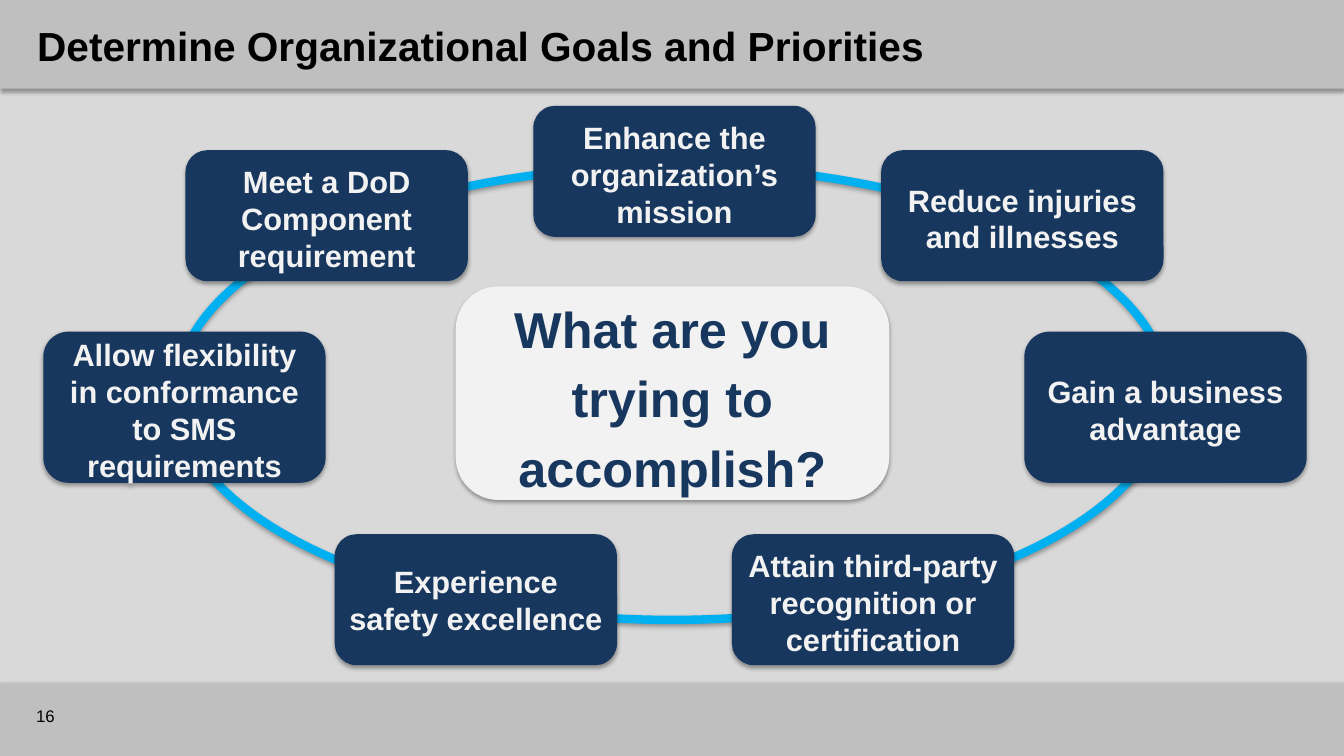
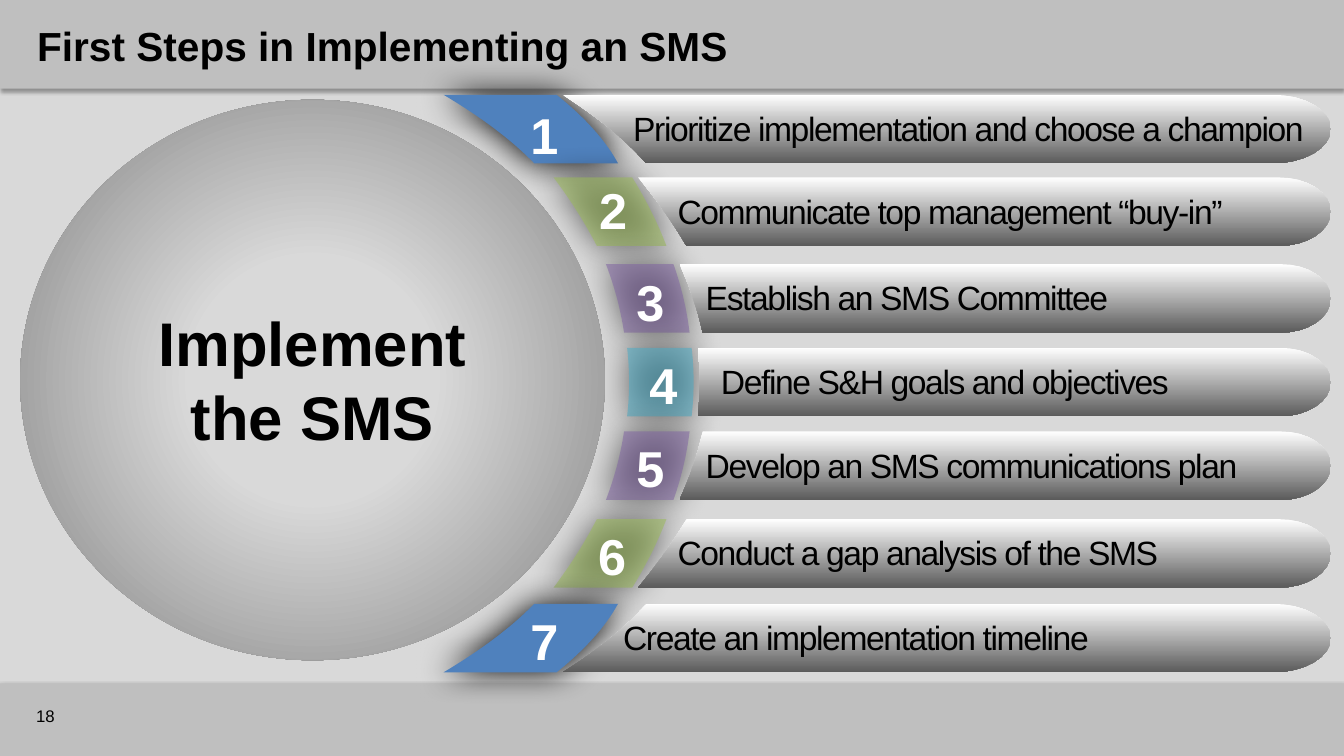
import math
import pptx
import pptx.util
import pptx.dml.color
import pptx.enum.shapes
import pptx.enum.text
import pptx.oxml.ns
from lxml import etree

RGB = pptx.dml.color.RGBColor
BLACK = RGB(0x00, 0x00, 0x00)
WHITE = RGB(0xFF, 0xFF, 0xFF)
PALE = RGB(0xF2, 0xF2, 0xF2)
LIGHT = RGB(0xD9, 0xD9, 0xD9)
BAND = RGB(0xBF, 0xBF, 0xBF)
GREY = RGB(0x80, 0x80, 0x80)
DARK = RGB(0x5B, 0x5B, 0x5B)
NAVY = RGB(0x17, 0x37, 0x5E)
SKY = RGB(0x00, 0xB0, 0xF0)
BLUE = RGB(0x4F, 0x81, 0xBD)
GREEN = RGB(0x9B, 0xBB, 0x59)
PURPLE = RGB(0x80, 0x64, 0xA2)
TEAL = RGB(0x4B, 0xAC, 0xC6)

PX = 9144
WIDE, HIGH = 1333, 750
SHAPE = pptx.enum.shapes.MSO_SHAPE
LEFT = pptx.enum.text.PP_ALIGN.LEFT
CENTER = pptx.enum.text.PP_ALIGN.CENTER
TOP = pptx.enum.text.MSO_ANCHOR.TOP
MIDDLE = pptx.enum.text.MSO_ANCHOR.MIDDLE
qn = pptx.oxml.ns.qn


def style(shape, fill=None, blur=3.1, drop=1.8, alpha=35):
    if fill is None:
        shape.fill.background()
    else:
        shape.fill.solid()
        shape.fill.fore_color.rgb = fill
    shape.line.fill.background()
    shape.shadow.inherit = False
    glow = etree.SubElement(
        shape._element.spPr.find(qn("a:effectLst")), qn("a:outerShdw"),
        blurRad=str(round(blur * 12700)), dist=str(round(drop * 12700)),
        dir="5400000", algn="ctr", rotWithShape="0")
    tint = etree.SubElement(glow, qn("a:srgbClr"), val="000000")
    etree.SubElement(tint, qn("a:alpha"), val=str(alpha * 1000))


def write(shape, text, size, color=BLACK, bold=False, align=LEFT,
          anchor=MIDDLE, pads=(10, 5, 10, 5), wrap=True):
    frame = shape.text_frame
    frame.word_wrap = wrap
    frame.vertical_anchor = anchor
    frame.margin_left, frame.margin_top, frame.margin_right, frame.margin_bottom = (
        pad * PX for pad in pads)
    para = frame.paragraphs[0]
    para.alignment = align
    run = para.add_run()
    run.text = text
    run.font.name = "Arial"
    run.font.size = pptx.util.Pt(size)
    run.font.bold = bold
    run.font.color.rgb = color
    return run


deck = pptx.Presentation()
deck.slide_width = WIDE * PX
deck.slide_height = HIGH * PX

pages = []
for title, number in (("Determine Organizational Goals and Priorities", "16"),
                      ("First Steps in Implementing an SMS", "18")):
    slide = deck.slides.add_slide(deck.slide_layouts[6])
    slide.background.fill.solid()
    slide.background.fill.fore_color.rgb = LIGHT
    for top, tall in ((678, 72), (0, 88)):
        band = slide.shapes.add_shape(SHAPE.RECTANGLE, 0, top * PX, WIDE * PX, tall * PX)
        style(band, BAND)
    head = slide.shapes.add_textbox(27 * PX, 14 * PX, 1293 * PX, 62 * PX)
    write(head, title, 29, bold=True)
    foot = slide.shapes.add_textbox(26 * PX, 690 * PX, 100 * PX, 40 * PX)
    write(foot, number, 12)
    pages.append(slide.shapes)

goals, steps = pages

ring = goals.add_shape(SHAPE.OVAL, 175 * PX, 165 * PX, 983 * PX, 450 * PX)
style(ring)
ring.line.color.rgb = SKY
ring.line.width = pptx.util.Pt(6)

core = goals.add_shape(SHAPE.ROUNDED_RECTANGLE, 452 * PX, 284 * PX, 430 * PX, 212 * PX)
core.adjustments[0] = 0.2
style(core, PALE)
write(core, "What are you trying to accomplish?", 36, NAVY, True, CENTER)
core.text_frame.paragraphs[0].line_spacing = 1.15

WIDER, CLOSE = (9, 9, 9, 4), (4, 4, 4, 4)
for left, top, tall, pads, text in (
        (874, 149, 130, WIDER, "Reduce injuries and illnesses"),
        (43, 329, 150, WIDER, "Allow flexibility in conformance to SMS requirements"),
        (184, 149, 130, WIDER, "Meet a DoD Component requirement"),
        (529, 105, 130, WIDER, "Enhance the organization’s mission"),
        (1016, 329, 150, WIDER, "Gain a business advantage"),
        (726, 530, 130, WIDER, "Attain third-party recognition or certification"),
        (332, 530, 130, CLOSE, "Experience safety excellence")):
    goal = goals.add_shape(SHAPE.ROUNDED_RECTANGLE, left * PX, top * PX, 280 * PX, tall * PX)
    style(goal, NAVY)
    write(goal, text, 22, PALE, True, CENTER, pads=pads)
    goal.text_frame.paragraphs[0].space_after = pptx.util.Pt(2)

TALL, END, PARTS = 68, 1320, 16
forms = (
    (BLUE, 100, 6, 58, (440, 530), (552, 613), (558, 641)),
    (GREEN, 54, 2, 52, (549, 592), (627, 661), (633, 681)),
    (PURPLE, 54, 2, 50, (601, 619), (668, 684), (674, 697)),
    (TEAL, 54, 2, 51, (622, 622), (686, 686), (692, 692)),
)
rows = (
    (94, 516, 98, 628, "Prioritize implementation and choose a champion"),
    (176, 584, 173, 672, "Communicate top management “buy-in”"),
    (262, 621, 264, 700, "Establish an SMS Committee"),
    (345, 634, 346, 715, "Define S&H goals and objectives"),
    (428, 621, 429, 700, "Develop an SMS communications plan"),
    (515, 583, 516, 672, "Conduct a gap analysis of the SMS"),
    (599, 516, 600, 618, "Create an implementation timeline"),
)
tabs, bars = [], []
for spot, row in enumerate(rows):
    top = row[0]
    color, alpha, bulge, cap, *ends = forms[min(spot, 6 - spot)]
    sides = []
    for start, stop in ends:
        if spot > 3:
            start, stop = stop, start
        sides.append([
            (start + (stop - start) * t + 4 * bulge * t * (1 - t), top + TALL * t)
            for t in (part / PARTS for part in range(PARTS + 1))])
    inner, outer, edge = sides
    curve = [
        (END - cap + cap * math.sin(turn), top + TALL / 2 * (1 - math.cos(turn)))
        for turn in (math.pi * part / PARTS for part in range(PARTS + 1))]
    tabs.append((inner + outer[::-1], color, alpha))
    bars.append((edge + curve[::-1], None, 100))

for points, color, alpha in tabs + bars:
    (left, top), *rest = [(x * 100, y * 100) for x, y in points]
    pen = steps.build_freeform(left, top, scale=PX / 100)
    pen.add_line_segments(rest, close=True)
    form = pen.convert_to_shape()
    if color is None:
        form.shadow.inherit = False
        form.line.fill.background()
        form.fill.gradient()
        form.fill.gradient_angle = 270
        for stop, shade in zip(form.fill.gradient_stops, (WHITE, DARK)):
            stop.color.rgb = shade
    else:
        style(form, color, 24, 0, 100)
        tint = form._element.spPr.find(qn("a:solidFill"))[0]
        etree.SubElement(tint, qn("a:alpha"), val=str(alpha * 1000))

for spot, (top, left, high, start, text) in enumerate(rows):
    digit = steps.add_textbox(left * PX, high * PX, 48 * PX, 71 * PX)
    write(digit, str(spot + 1), 36, WHITE, True, CENTER, TOP, wrap=False)
    label = steps.add_textbox(start * PX, (top + 13) * PX, (1326 - start) * PX, 40 * PX)
    run = write(label, text, 24, pads=(0, 0, 0, 0))
    run._r.get_or_add_rPr().set("spc", "-100")

disc = steps.add_shape(SHAPE.OVAL, 20 * PX, 99 * PX, 580 * PX, 556 * PX)
disc.shadow.inherit = False
disc.line.fill.background()
disc.fill.gradient()
for stop, shade, place in zip(disc.fill.gradient_stops, (LIGHT, GREY), (0.3, 1)):
    stop.color.rgb = shade
    stop.position = place
blend = disc._element.spPr.find(qn("a:gradFill"))
line = blend.find(qn("a:lin"))
round_path = etree.Element(qn("a:path"), path="circle")
etree.SubElement(round_path, qn("a:fillToRect"), l="50000", t="50000", r="50000", b="50000")
blend.replace(line, round_path)

name = steps.add_textbox(122 * PX, 298 * PX, 376 * PX, 158 * PX)
write(name, "Implement the SMS", 44, bold=True, align=CENTER, anchor=TOP)

deck.save("out.pptx")
